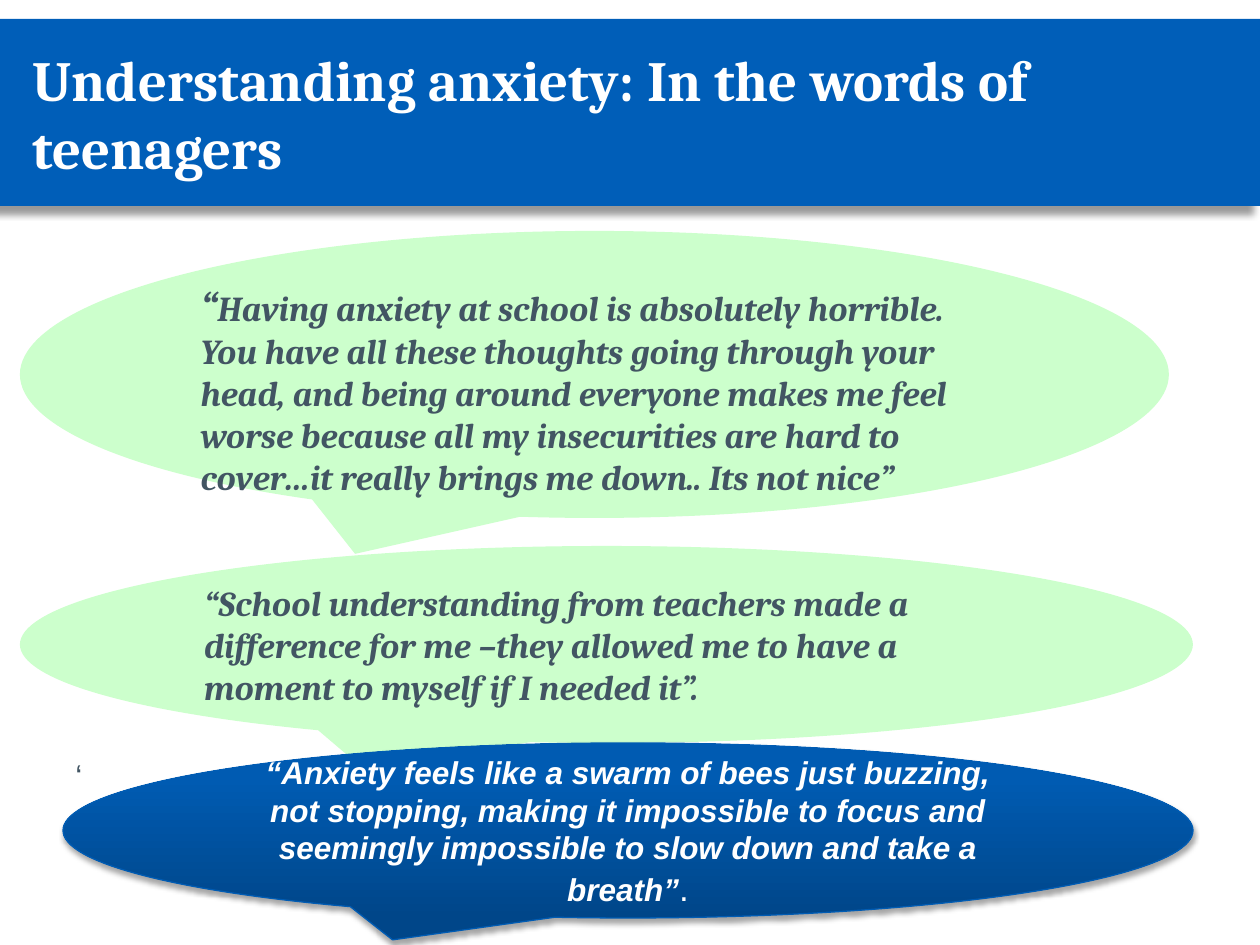
import copy
from dataclasses import dataclass
from typing import Optional

import pptx
import pptx.dml.color
import pptx.enum.shapes
import pptx.enum.text
import pptx.oxml
import pptx.oxml.ns
import pptx.util

EMU_PER_PX = 914400 / 126
SHAPES = pptx.enum.shapes.MSO_SHAPE
ANCHOR = pptx.enum.text.MSO_ANCHOR
ALIGN = pptx.enum.text.PP_ALIGN
qn = pptx.oxml.ns.qn

BLUE, MINT, SLATE, WHITE = "005EB8", "CCFFCC", "425563", "FFFFFF"
QUOTE = {"name": "Cambria", "size": 20, "bold": True, "italic": True}


@dataclass
class Span:
    text: str
    color: str
    font: dict


@dataclass
class Shadow:
    alpha: int
    blur: float
    distance: float
    angle: int


@dataclass
class Bubble:
    bounds: tuple[int, int, int, int]
    spans: list[Span]
    fill: Optional[str] = MINT
    anchor: ANCHOR = ANCHOR.TOP
    align: ALIGN = ALIGN.LEFT
    space_before: int = 0
    text_shadow: bool = True


def px(value: int) -> int:
    return round(value * EMU_PER_PX)


def rgb(color: str) -> pptx.dml.color.RGBColor:
    return pptx.dml.color.RGBColor.from_string(color)


def shadow_xml(shadow: Shadow) -> str:
    blur, distance = (pptx.util.Pt(v) for v in (shadow.blur, shadow.distance))
    return (f'<a:outerShdw {pptx.oxml.ns.nsdecls("a")} blurRad="{blur}" dist="{distance}" '
            f'dir="{shadow.angle * 60000}" algn="tl" rotWithShape="0"><a:srgbClr val="000000">'
            f'<a:alpha val="{shadow.alpha * 1000}"/></a:srgbClr></a:outerShdw>')


def add_shadow(shape, shadow: Shadow) -> None:
    effects = shape.element.spPr.find(qn("a:effectLst"))
    effects.append(pptx.oxml.parse_xml(shadow_xml(shadow)))


def add_shape(page, kind: SHAPES, bounds: tuple, fill: Optional[str]):
    shape = page.shapes.add_shape(kind, *map(px, bounds))
    shape.shadow.inherit = False
    shape.line.fill.background()
    if fill:
        shape.fill.solid()
        shape.fill.fore_color.rgb = rgb(fill)
    return shape


def write(para, spans: list[Span], text_shadow: bool = False) -> None:
    for item in spans:
        span = para.add_run()
        span.text = item.text
        for key, value in item.font.items():
            setattr(span.font, key, pptx.util.Pt(value) if key == "size" else value)
        span.font.color.rgb = rgb(item.color)
        if text_shadow:
            effects = pptx.oxml.parse_xml(f'<a:effectLst {pptx.oxml.ns.nsdecls("a")}/>')
            effects.append(pptx.oxml.parse_xml(shadow_xml(Shadow(43, 3, 3, 45))))
            span.font.fill  # the colour must precede the effects
            span.font._element.find(qn("a:solidFill")).addnext(effects)


def add_text(page, bounds: tuple, span: Span, wrap: bool, anchor: ANCHOR) -> None:
    frame = page.shapes.add_textbox(*map(px, bounds)).text_frame
    frame.word_wrap = wrap
    frame.vertical_anchor = anchor
    write(frame.paragraphs[0], [span])


def add_bubble(page, bubble: Bubble):
    shape = add_shape(page, SHAPES.OVAL_CALLOUT, bubble.bounds, bubble.fill)
    frame = shape.text_frame
    frame.word_wrap = True
    frame.vertical_anchor = bubble.anchor
    para = frame.paragraphs[0]
    para.alignment = bubble.align
    para.space_before = pptx.util.Pt(bubble.space_before)
    write(para, bubble.spans, bubble.text_shadow)
    return shape


def fill_gradient(shape, stops: list[tuple[float, str]], angle: int) -> None:
    shape.fill.gradient()
    shape.fill.gradient_angle = angle
    stop_list = next(shape.element.spPr.iter(qn("a:gsLst")))
    while len(stop_list) < len(stops):
        stop_list.append(copy.deepcopy(stop_list[-1]))
    for stop, (position, color) in zip(shape.fill.gradient_stops, stops):
        stop.position = position
        stop.color.rgb = rgb(color)


def main() -> None:
    deck = pptx.Presentation()
    deck.slide_width, deck.slide_height = px(1260), px(945)
    page = deck.slides.add_slide(deck.slide_layouts[6])

    # Title banner
    banner = add_shape(page, SHAPES.RECTANGLE, (0, 19, 1260, 187), BLUE)
    add_shadow(banner, Shadow(40, 4, 6, 135))
    title = Span("Understanding anxiety: In the words of teenagers", WHITE,
                 {"name": "Cambria", "size": 32.4, "bold": True})
    add_text(page, (20, 34, 1220, 158), title, True, ANCHOR.MIDDLE)

    # Stray quotation mark
    mark = Span("‘", SLATE, {"name": "Arial", "size": 18})
    add_text(page, (63, 750, 33, 50), mark, False, ANCHOR.TOP)

    # Green speech bubbles
    add_bubble(page, Bubble((20, 231, 1149, 287), [
        Span("“", SLATE, QUOTE | {"size": 24}),
        Span("Having anxiety at school is absolutely horrible. You have all these thoughts "
             "going through your head, and being around everyone makes me feel worse because "
             "all my insecurities are hard to cover…it really brings me down.. Its not nice”",
             SLATE, QUOTE)], space_before=4))
    add_bubble(page, Bubble((20, 546, 1173, 197), [
        Span("“School understanding from teachers made a difference for me –they allowed me "
             "to have a moment to myself if I needed it”.", SLATE, QUOTE)]))

    # Blue speech bubble
    swarm = add_bubble(page, Bubble((63, 743, 1130, 175), [
        Span("“Anxiety feels like a swarm of bees just buzzing, not stopping, making it "
             "impossible to focus and seemingly impossible to slow down and take a breath”",
             WHITE, QUOTE | {"name": "Arial", "size": 18}),
        Span(".", WHITE, {"name": "Arial", "size": 20, "bold": False, "italic": False})],
        fill=None, anchor=ANCHOR.MIDDLE, align=ALIGN.CENTER, text_shadow=False))
    fill_gradient(swarm, [(0, "004689"), (0.8, "005BB2"), (1, "005CB3")], 90)
    swarm.line.color.rgb = rgb("005CB4")
    swarm.line.width = pptx.util.Pt(0.75)
    add_shadow(swarm, Shadow(35, 3.1, 1.8, 90))

    deck.save("out.pptx")


if __name__ == "__main__":
    main()
